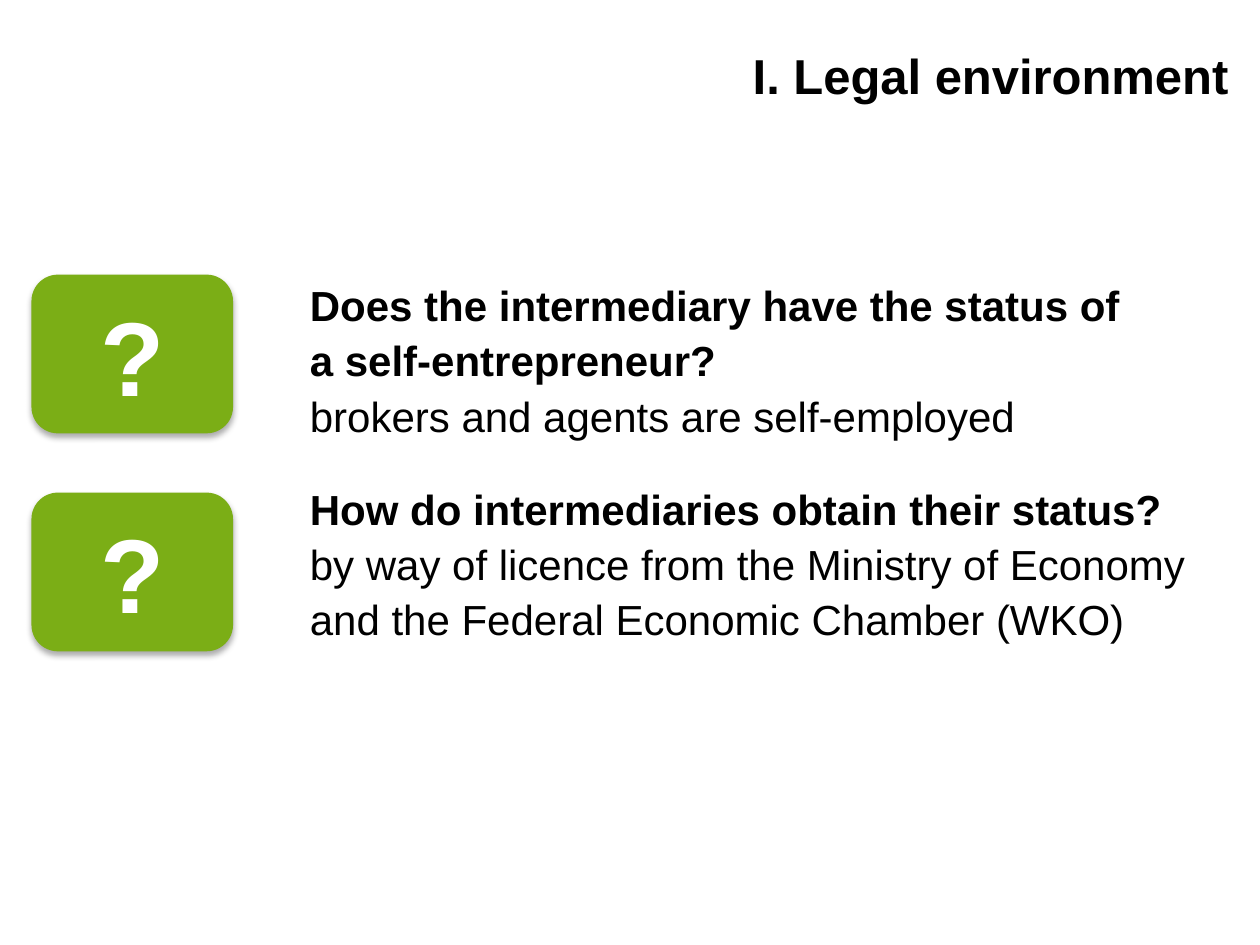
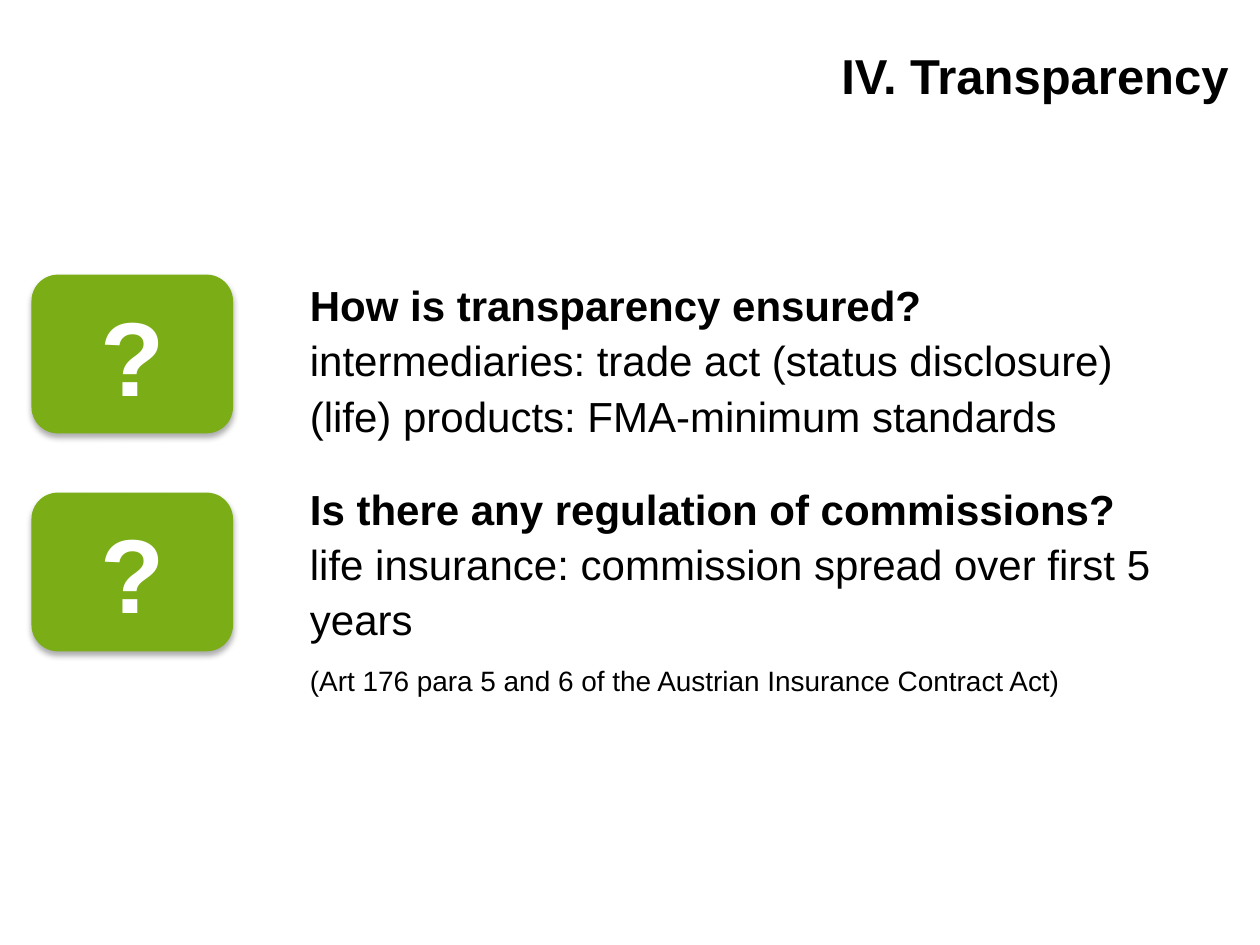
from dataclasses import dataclass

from lxml import etree
from pptx import Presentation
from pptx.dml.color import RGBColor
from pptx.enum.shapes import MSO_SHAPE as SHAPE
from pptx.enum.text import MSO_ANCHOR as ANCHOR, PP_ALIGN as ALIGN
from pptx.oxml import parse_xml
from pptx.oxml.ns import nsdecls
from pptx.util import Inches, Pt

# Shared style
FONT = "Arial"
BLACK, WHITE, GREEN = "000000", "FFFFFF", "7BAE16"
BLOCK_TOP, BADGE_PITCH = 2.18, 1.73
LINE_PITCH, NOTE_PITCH, QUESTION_GAP = 31.6, 30, 21.5


@dataclass
class Question:
    text: str
    answer: str
    note: str = ""


@dataclass
class Topic:
    title: str
    questions: list[Question]


TOPICS = [
    Topic("I. Legal environment", [
        Question("Does the intermediary have the status of\va self-entrepreneur?",
                 "brokers and agents are self-employed"),
        Question("How do intermediaries obtain their status?",
                 "by way of licence from the Ministry of Economy\v"
                 "and the Federal Economic Chamber (WKO)"),
    ]),
    Topic("IV. Transparency", [
        Question("How is transparency ensured?",
                 "intermediaries: trade act (status disclosure)\v"
                 "(life) products: FMA-minimum standards"),
        Question("Is there any regulation of commissions?",
                 "life insurance: commission spread over first 5 years",
                 "(Art 176 para 5 and 6 of the Austrian Insurance Contract Act)"),
    ]),
]


def rgb(color: str) -> RGBColor:
    return RGBColor.from_string(color)


def write(p, text: str, size: float, bold: bool = False, color: str = BLACK) -> None:
    p.text = text
    for r in p.runs:
        r.font.name, r.font.size, r.font.bold = FONT, Pt(size), bold
        r.font.color.rgb = rgb(color)


def add_text_frame(s, left: float, top: float, width: float, height: float):
    tf = s.shapes.add_textbox(Inches(left), Inches(top), Inches(width), Inches(height)).text_frame
    tf.word_wrap = True
    tf.margin_left = tf.margin_top = tf.margin_right = tf.margin_bottom = 0
    return tf


def add_shadow(sp) -> None:
    sp.shadow.inherit = False
    effects = sp._element.spPr.find("{*}effectLst")
    shadow = parse_xml(f'<a:outerShdw {nsdecls("a")} blurRad="{Pt(3.5)}" dist="{Pt(2.2)}" '
                       'dir="5400000" rotWithShape="0"/>')
    black = etree.SubElement(shadow, effects.tag.replace("effectLst", "srgbClr"), val=BLACK)
    etree.SubElement(black, effects.tag.replace("effectLst", "alpha"), val="32000")
    effects.append(shadow)


def add_title(s, title: str) -> None:
    p = add_text_frame(s, 1.22, 0.36, 8.53, 0.47).paragraphs[0]
    write(p, title, 28, bold=True)
    p.alignment = ALIGN.RIGHT


def add_badge(s, top: float) -> None:
    sp = s.shapes.add_shape(SHAPE.ROUNDED_RECTANGLE, Inches(0.25), Inches(top),
                            Inches(1.6), Inches(1.26))
    sp.fill.solid()
    sp.fill.fore_color.rgb = rgb(GREEN)
    sp.line.fill.background()
    add_shadow(sp)
    tf = sp.text_frame
    tf.vertical_anchor = ANCHOR.MIDDLE
    p = tf.paragraphs[0]
    write(p, "?", 60, bold=True, color=WHITE)
    p.alignment = ALIGN.CENTER


def add_questions(s, questions: list[Question]) -> None:
    tf = add_text_frame(s, 2.46, BLOCK_TOP, 7.54, 4.49)
    for i, question in enumerate(questions):
        p = tf.add_paragraph() if i else tf.paragraphs[0]
        write(p, question.text, 24, bold=True)
        p.line_spacing = Pt(LINE_PITCH)
        p.space_before = Pt(QUESTION_GAP if i else 0)
        p = tf.add_paragraph()
        write(p, question.answer, 24)
        p.line_spacing = Pt(LINE_PITCH)
        if question.note:
            p = tf.add_paragraph()
            write(p, question.note, 16)
            p.line_spacing = Pt(NOTE_PITCH)


def add_topic(prs, topic: Topic) -> None:
    s = prs.slides.add_slide(prs.slide_layouts[6])
    add_questions(s, topic.questions)
    for i in range(len(topic.questions)):
        add_badge(s, BLOCK_TOP + i * BADGE_PITCH)
    add_title(s, topic.title)


def main() -> None:
    prs = Presentation()
    prs.slide_width, prs.slide_height = Inches(10), Inches(7.5)
    for topic in TOPICS:
        add_topic(prs, topic)
    prs.save("out.pptx")


if __name__ == "__main__":
    main()
